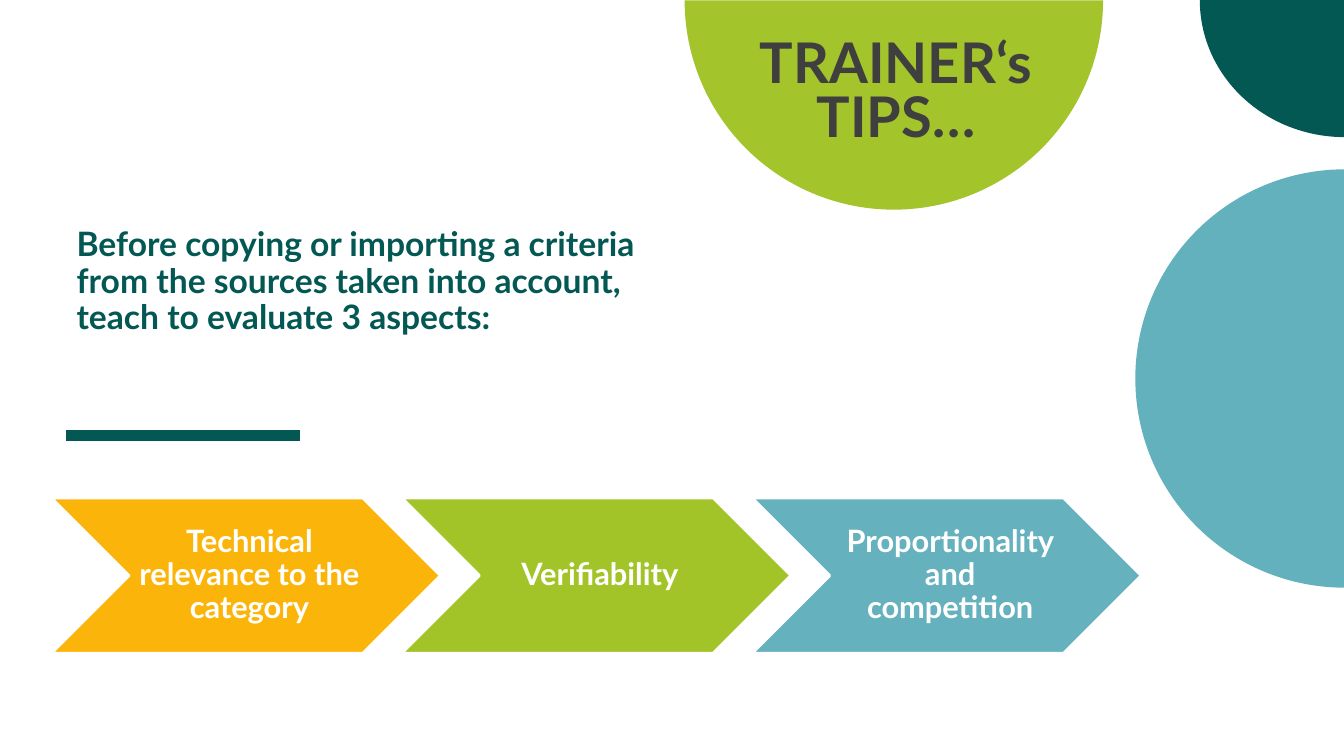
from lxml import etree
from pptx import Presentation
from pptx.dml.color import RGBColor
from pptx.enum.shapes import MSO_CONNECTOR, MSO_SHAPE
from pptx.enum.text import MSO_ANCHOR, MSO_AUTO_SIZE, PP_ALIGN
from pptx.oxml.ns import qn
from pptx.util import Inches, Pt

PIE, CHEVRON = MSO_SHAPE.PIE, MSO_SHAPE.CHEVRON
STRAIGHT = MSO_CONNECTOR.STRAIGHT
TOP, MIDDLE, BOTTOM = MSO_ANCHOR.TOP, MSO_ANCHOR.MIDDLE, MSO_ANCHOR.BOTTOM
LEFT, CENTER = PP_ALIGN.LEFT, PP_ALIGN.CENTER
NO_AUTOFIT = MSO_AUTO_SIZE.NONE

FONT = "Lato"
DARK_GREEN, LIME, TEAL = "035854", "A3C42A", "64B1BE"
WHITE, GREY = "FFFFFF", "3F3F3F"
QUARTER_TURN, HALF_TURN = 54, 108

PIES = [
    ((11.9, -1.36, 2.87, 2.72), QUARTER_TURN, 0, DARK_GREEN),
    ((6.79, -2.07, 4.15, 4.15), 0, 0, LIME),
    ((11.26, 1.68, 4.15, 4.15), 0, 90, TEAL),
]
ASPECTS = [
    ("Technical relevance to the category", "FBB50A"),
    ("Verifiability", "A3C429"),
    ("Proportionality and competition", "65B1BE"),
]
ASPECT_LEFT, ASPECT_STEP = 0.51, 3.475


def rgb(value):
    """Turn a hex string into a colour."""
    return RGBColor.from_string(value)


def set_all(target, values):
    """Set every attribute in values on target."""
    for name, value in values.items():
        setattr(target, name, value)


def write_text(shape, text, size, color, align, anchor, spacing, insets=(0, 0, 0, 0)):
    """Write one bold paragraph into a shape and return it."""
    frame = shape.text_frame
    left, top, right, bottom = map(Inches, insets)
    set_all(frame, {
        "word_wrap": True, "auto_size": NO_AUTOFIT, "vertical_anchor": anchor,
        "margin_left": left, "margin_top": top,
        "margin_right": right, "margin_bottom": bottom,
    })
    paragraph = frame.paragraphs[0]
    set_all(paragraph, {"alignment": align, "line_spacing": spacing, "space_before": Pt(0)})
    run = paragraph.add_run()
    run.text = text
    set_all(run.font, {"name": FONT, "size": Pt(size), "bold": True})
    run.font.color.rgb = rgb(color)
    return paragraph


def add_filled(slide, kind, box, color):
    """Add a flat filled preset shape without an outline."""
    shape = slide.shapes.add_shape(kind, *map(Inches, box))
    shape.shadow.inherit = False
    shape.fill.solid()
    shape.fill.fore_color.rgb = rgb(color)
    shape.line.fill.background()
    return shape


def add_pie(slide, box, start, rotation, color):
    """Add a part of a disc running from start to the half turn."""
    pie = add_filled(slide, PIE, box, color)
    pie.adjustments[0] = start
    pie.adjustments[1] = HALF_TURN
    pie.rotation = rotation


def add_rule(slide, left, right, top):
    """Add the thick horizontal rule."""
    rule = slide.shapes.add_connector(
        STRAIGHT, Inches(left), Inches(top), Inches(right), Inches(top))
    rule.line.color.rgb = rgb(DARK_GREEN)
    rule.line.width = Pt(8)
    etree.SubElement(rule.element.spPr, qn("a:effectLst"))


def add_aspect(slide, left, text, color):
    """Add one labelled chevron."""
    chevron = add_filled(slide, CHEVRON, (left, 4.94, 3.86, 1.54), color)
    chevron.line.color.rgb = rgb(WHITE)
    chevron.line.width = Pt(2)
    write_text(chevron, text, 22, WHITE, CENTER, MIDDLE, 0.9, (0.1, 0.03, 0.03, 0.03))


def place_in_front(slide, placeholder, box):
    """Move a placeholder to its box, above the shapes drawn so far."""
    values = zip(("left", "top", "width", "height"), map(Inches, box))
    set_all(placeholder, dict(values))
    slide.shapes.element.append(placeholder.element)


def add_title(slide):
    """Fill the title placeholder."""
    title = slide.shapes.title
    place_in_front(slide, title, (7.09, -0.85, 3.59, 2.32))
    write_text(title, "TRAINER‘s TIPS…", 40, GREY, CENTER, BOTTOM, 0.8)


def add_intro(slide):
    """Fill the body placeholder with the unbulleted introduction."""
    intro = slide.placeholders[1]
    place_in_front(slide, intro, (0.51, 2.26, 6, 1.8))
    paragraph = write_text(
        intro,
        "Before copying or importing a criteria from the sources taken into account, "
        "teach to evaluate 3 aspects:",
        24, DARK_GREEN, LEFT, TOP, 0.9)
    properties = paragraph._p.get_or_add_pPr()
    properties.set("marL", str(Inches(0.25)))
    properties.set("indent", "0")
    etree.SubElement(properties, qn("a:buNone"))


def main():
    """Build the slide and save it."""
    deck = Presentation()
    set_all(deck, {"slide_width": Inches(13.33), "slide_height": Inches(7.5)})
    slide = deck.slides.add_slide(deck.slide_layouts[1])
    add_rule(slide, 0.65, 2.98, 4.32)
    for pie in PIES:
        add_pie(slide, *pie)
    add_title(slide)
    add_intro(slide)
    for index, (text, color) in enumerate(ASPECTS):
        add_aspect(slide, ASPECT_LEFT + index * ASPECT_STEP, text, color)
    deck.save("out.pptx")


if __name__ == "__main__":
    main()
